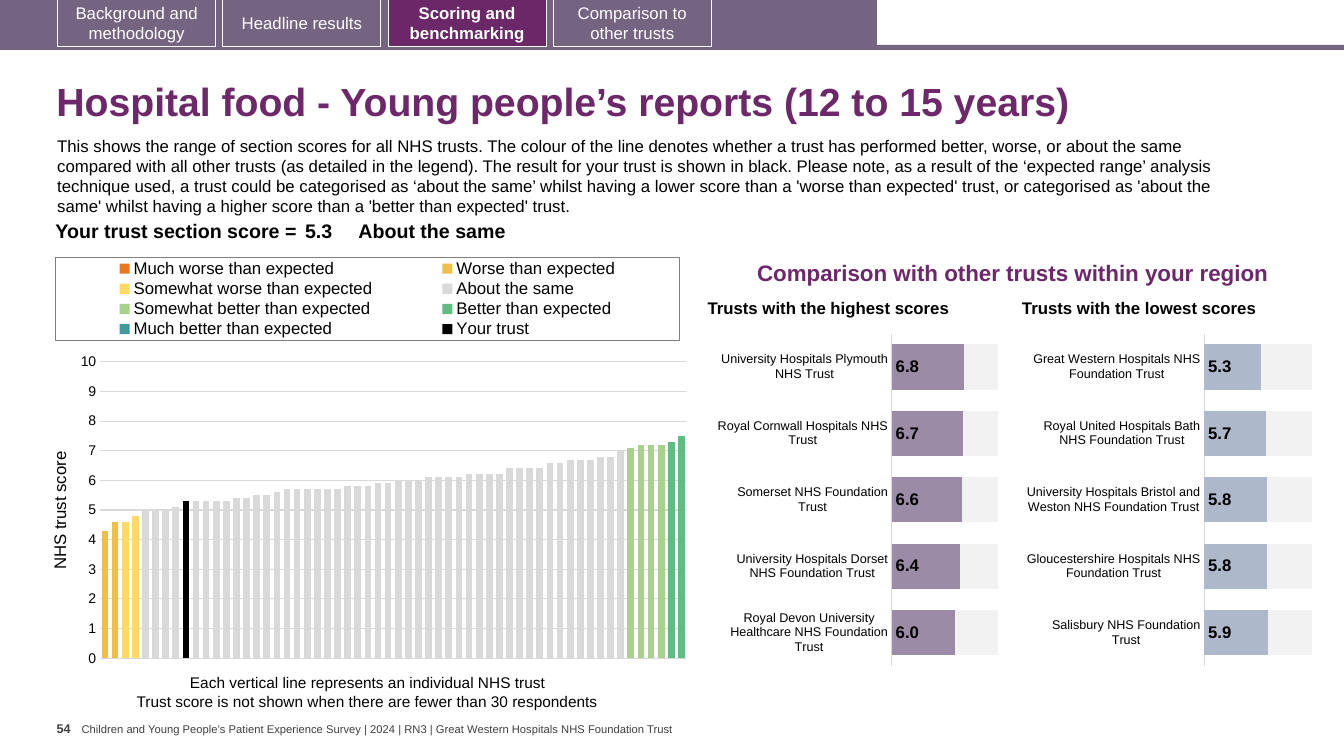
import copy
import pptx
import pptx.chart.data
import pptx.dml.color
import pptx.enum.chart
import pptx.enum.shapes
import pptx.enum.text
import pptx.oxml
import pptx.oxml.ns
import pptx.util
from dataclasses import dataclass

Pt = pptx.util.Pt
Anchor = pptx.enum.text.MSO_ANCHOR
Align = pptx.enum.text.PP_ALIGN
ChartType = pptx.enum.chart.XL_CHART_TYPE
qn = pptx.oxml.ns.qn
CHART_NS = pptx.oxml.ns.nsdecls("c", "a")


@dataclass(frozen=True)
class Theme:
    font: str = "Arial"
    band: str = "756382"
    active: str = "6B2768"
    heading: str = "6D276A"
    white: str = "FFFFFF"
    ink: str = "000000"
    footer: str = "404040"
    grid: str = "D9D9D9"
    frame: str = "7F7F7F"
    rest: str = "F2F2F2"
    highest: str = "9C8BA7"
    lowest: str = "ADB9CA"
    title_size: float = 28
    heading_size: float = 16
    score_size: float = 14
    body_size: float = 12
    caption_size: float = 11
    tick_size: float = 10
    small_size: float = 9
    footer_size: float = 8


THEME = Theme()

TITLE = "Hospital food - Young people’s reports (12 to 15 years)"
TABS = ["Background and methodology", "Headline results",
        "Scoring and benchmarking", "Comparison to other trusts"]
ACTIVE_TAB = 2
INTRO = (
    "This shows the range of section scores for all NHS trusts. The colour of the line denotes "
    "whether a trust has performed better, worse, or about the same compared with all other trusts "
    "(as detailed in the legend). The result for your trust is shown in black. Please note, as a "
    "result of the ‘expected range’ analysis technique used, a trust could be categorised as "
    "‘about the same’ whilst having a lower score than a 'worse than expected' trust, or "
    "categorised as 'about the same' whilst having a higher score than a 'better than expected' trust."
)
# text, column width, alignment, side margin
SCORE = [("Your trust section score =", 189.5, Align.RIGHT, 2.9),
         ("5.3", 41, Align.LEFT, 2.9), ("About the same", 611.5, Align.LEFT, 0)]

NO_MARGIN = (0, 0)
HEADING = dict(bold=True, margin=NO_MARGIN, anchor=Anchor.BOTTOM, spacing=0.9)
# text, (left, top, width, height), size, format
TEXTS = [
    (INTRO, (33.8, 93.2, 873.4, 65.5), THEME.body_size, {}),
    ("Each vertical line represents an individual NHS trust",
     (128.6, 477.4, 270, 20.9), THEME.caption_size, dict(wrap=False)),
    ("Trust score is not shown when there are fewer than 30 respondents",
     (90.5, 491, 346.3, 20.9), THEME.caption_size, dict(wrap=False)),
    ("Comparison with other trusts within your region",
     (540.8, 167.8, 393.8, 36.7), THEME.heading_size, dict(HEADING, color=THEME.heading)),
    ("Trusts with the highest scores", (505.4, 210.7, 206, 16.6), THEME.body_size, HEADING),
    ("Trusts with the lowest scores", (730, 210.7, 201, 16.6), THEME.body_size, HEADING),
    ("54", (40.5, 511.4, 18, 28.6), THEME.small_size,
     dict(bold=True, color=THEME.footer, margin=(0, 3.6), wrap=False)),
    ("Children and Young People’s Patient Experience Survey | 2024 | RN3 | "
     "Great Western Hospitals NHS Foundation Trust",
     (58.3, 515.8, 429, 9.4), THEME.footer_size,
     dict(color=THEME.footer, margin=NO_MARGIN, anchor=Anchor.MIDDLE, wrap=False)),
]

TRUST_COUNT = 58
# name, colour, index of first trust, scores
BANDS = [
    ("Much worse than expected", "E87722", 0, []),
    ("Worse than expected", "F1BE48", 0, [4.3, 4.6]),
    ("Somewhat worse than expected", "FFD966", 2, [4.6, 4.8]),
    ("About the same", "D9D9D9", 4, [
        5, 5, 5, 5.1, 5.3, 5.3, 5.3, 5.3, 5.3, 5.4, 5.4, 5.5, 5.5, 5.6, 5.7, 5.7,
        5.7, 5.7, 5.7, 5.7, 5.8, 5.8, 5.8, 5.9, 5.9, 6, 6, 6, 6.1, 6.1, 6.1, 6.1,
        6.2, 6.2, 6.2, 6.2, 6.4, 6.4, 6.4, 6.4, 6.6, 6.6, 6.7, 6.7, 6.7, 6.8, 6.8, 7]),
    ("Somewhat better than expected", "A9D18E", 52, [7.1, 7.2, 7.2, 7.2]),
    ("Better than expected", "5FBD83", 56, [7.3, 7.5]),
    ("Much better than expected", "419999", 0, []),
    ("Your trust", "000000", 8, [5.3]),
]
MAX_SCORE = 10
# frame, bar colour, trust scores
REGION = [
    ((733.5, 233.5, 208, 247), THEME.lowest, {
        "Great Western Hospitals NHS Foundation Trust": 5.3,
        "Royal United Hospitals Bath NHS Foundation Trust": 5.7,
        "University Hospitals Bristol and Weston NHS Foundation Trust": 5.8,
        "Gloucestershire Hospitals NHS Foundation Trust": 5.8,
        "Salisbury NHS Foundation Trust": 5.9}),
    ((511, 233.5, 206, 247), THEME.highest, {
        "University Hospitals Plymouth NHS Trust": 6.8,
        "Royal Cornwall Hospitals NHS Trust": 6.7,
        "Somerset NHS Foundation Trust": 6.6,
        "University Hospitals Dorset NHS Foundation Trust": 6.4,
        "Royal Devon University Healthcare NHS Foundation Trust": 6.0}),
]
# kind, own id, crossing id, hidden, side, crossing point
RIGHT_AXES = [("valAx", 9002, 9001, 0, "r", "max"), ("catAx", 9001, 9002, 1, "b", "autoZero")]


def rgb(value):
    return pptx.dml.color.RGBColor.from_string(value)


def points(frame):
    return [Pt(value) for value in frame]


def style_font(font, size, color=THEME.ink, bold=False):
    for name, value in dict(name=THEME.font, size=Pt(size), bold=bold).items():
        setattr(font, name, value)
    font.color.rgb = rgb(color)


def write(text_frame, text, size, color=THEME.ink, bold=False, align=Align.LEFT,
          anchor=Anchor.TOP, margin=(7.2, 3.6), spacing=None, wrap=True):
    side, edge = points(margin)
    values = dict(margin_left=side, margin_right=side, margin_top=edge, margin_bottom=edge,
                  vertical_anchor=anchor, word_wrap=wrap)
    for name, value in values.items():
        setattr(text_frame, name, value)
    para = text_frame.paragraphs[0]
    para.alignment, para.line_spacing = align, spacing
    span = para.add_run()
    span.text = text
    style_font(span.font, size, color, bold)


def add_rectangle(page, frame, fill, outline=None):
    box = page.shapes.add_shape(pptx.enum.shapes.MSO_SHAPE.RECTANGLE, *points(frame))
    box.shadow.inherit = False
    box.fill.solid()
    box.fill.fore_color.rgb = rgb(fill)
    if outline:
        box.line.color.rgb, box.line.width = rgb(outline), Pt(0.75)
    else:
        box.line.fill.background()
    return box


def add_navigation(page):
    add_rectangle(page, (0, 32, 960, 3.6), THEME.band)
    add_rectangle(page, (0, 0, 626.4, 33.8), THEME.band)
    for index, label in enumerate(TABS):
        active = index == ACTIVE_TAB
        tab = add_rectangle(page, (41.2 + 118 * index, -0.5, 113, 33.8),
                            THEME.active if active else THEME.band, THEME.white)
        write(tab.text_frame, label, THEME.body_size, THEME.white, active,
              Align.CENTER, Anchor.MIDDLE)


def add_score(page):
    total = sum(width for _, width, _, _ in SCORE)
    table = page.shapes.add_table(1, len(SCORE), *points((25.5, 154.8, total, 22))).table
    table.first_row = table.horz_banding = False
    for index, (text, width, align, side) in enumerate(SCORE):
        table.columns[index].width = Pt(width)
        cell = table.cell(0, index)
        cell.fill.background()
        write(cell.text_frame, text, THEME.score_size, bold=True, align=align)
        cell.margin_left = cell.margin_right = Pt(side)
        cell.margin_top = cell.margin_bottom = Pt(2.9)


def add_bars(page, kind, frame, names, series, gap):
    """Add a bar chart; series holds (name, colour, values)."""
    data = pptx.chart.data.CategoryChartData()
    data.categories = names
    for name, _, values in series:
        data.add_series(name, values)
    chart = page.shapes.add_chart(kind, *points(frame), data).chart
    chart.has_title = chart.has_legend = False
    style_font(chart.font, THEME.tick_size)
    plot = chart.plots[0]
    plot.gap_width, plot.overlap, plot.vary_by_categories = gap, 100, False
    for drawn, (_, color, _) in zip(plot.series, series):
        drawn.format.fill.solid()
        drawn.format.fill.fore_color.rgb = rgb(color)
    chart.value_axis.minimum_scale, chart.value_axis.maximum_scale = 0, MAX_SCORE
    return chart


def place(element, index, **edges):
    """Fix a chart part at fractions of the chart area."""
    for old in element.findall(qn("c:layout")):
        element.remove(old)
    modes = '<c:xMode val="edge"/><c:yMode val="edge"/>'
    target = '<c:layoutTarget val="inner"/>' if index == 0 else ""
    sizes = "".join(f'<c:{name} val="{value}"/>' for name, value in edges.items())
    element.insert(index, pptx.oxml.parse_xml(
        f'<c:layout {CHART_NS}><c:manualLayout>{target}{modes}{sizes}</c:manualLayout></c:layout>'))


def move_last_to_right_axis(chart):
    area = chart._chartSpace.chart.plotArea
    left = area.find(qn("c:barChart"))
    right = copy.deepcopy(left)
    left.remove(left.findall(qn("c:ser"))[-1])
    for series in right.findall(qn("c:ser"))[:-1]:
        right.remove(series)
    for axis_id, value in zip(right.findall(qn("c:axId")), (9001, 9002)):
        axis_id.set("val", str(value))
    left.addnext(right)
    last = area.find(qn("c:valAx"))
    for kind, own, crossing, hidden, side, crosses in RIGHT_AXES:
        limits = f'<c:max val="{MAX_SCORE}"/><c:min val="0"/>' if kind == "valAx" else ""
        axis = pptx.oxml.parse_xml(
            f'<c:{kind} {CHART_NS}><c:axId val="{own}"/><c:scaling><c:orientation val="minMax"/>'
            f'{limits}</c:scaling><c:delete val="{hidden}"/><c:axPos val="{side}"/>'
            '<c:majorTickMark val="out"/><c:minorTickMark val="none"/><c:tickLblPos val="none"/>'
            '<c:spPr><a:ln><a:noFill/></a:ln></c:spPr>'
            f'<c:crossAx val="{crossing}"/><c:crosses val="{crosses}"/></c:{kind}>')
        last.addnext(axis)
        last = axis


def add_trust_chart(page):
    series = [(name, color, [None] * start + scores + [None] * (TRUST_COUNT - start - len(scores)))
              for name, color, start, scores in BANDS]
    names = [str(number + 1) for number in range(TRUST_COUNT)]
    chart = add_bars(page, ChartType.COLUMN_CLUSTERED, (33.1, 177.8, 461.5, 303.1),
                     names, series, 50)
    chart.category_axis.visible = False
    axis = chart.value_axis
    axis.major_unit = 1
    axis.major_tick_mark = pptx.enum.chart.XL_TICK_MARK.NONE
    axis.format.line.fill.background()
    axis.major_gridlines.format.line.color.rgb = rgb(THEME.grid)
    axis.major_gridlines.format.line.width = Pt(0.75)
    style_font(axis.tick_labels.font, THEME.tick_size)
    title = axis.axis_title
    title.text_frame.text = "NHS trust score"
    style_font(title.text_frame.paragraphs[0].runs[0].font, THEME.body_size)
    place(title._element, 1, x=0, y=0.47)
    chart.has_legend = True
    legend = chart.legend
    legend.position = pptx.enum.chart.XL_LEGEND_POSITION.TOP
    legend.include_in_layout = False
    style_font(legend.font, THEME.body_size)
    place(legend._element, 1, x=0.014, y=0.02, w=0.966, h=0.196)
    legend._element.find(qn("c:txPr")).addprevious(pptx.oxml.parse_xml(
        f'<c:spPr {CHART_NS}><a:ln w="9525"><a:solidFill>'
        f'<a:srgbClr val="{THEME.frame}"/></a:solidFill></a:ln></c:spPr>'))
    move_last_to_right_axis(chart)
    place(chart._chartSpace.chart.plotArea, 0, x=0.083, y=0.266, w=0.908, h=0.699)


def add_region_chart(page, frame, color, scores):
    rest = [round(MAX_SCORE - score, 1) for score in scores.values()]
    series = [("Series 1", color, list(scores.values())), ("Series 2", THEME.rest, rest)]
    chart = add_bars(page, ChartType.BAR_STACKED, frame, list(scores), series, 47)
    chart.value_axis.visible = chart.value_axis.has_major_gridlines = False
    axis = chart.category_axis
    axis.reverse_order = True
    axis.major_tick_mark = pptx.enum.chart.XL_TICK_MARK.NONE
    axis.format.line.color.rgb, axis.format.line.width = rgb(THEME.grid), Pt(0.75)
    style_font(axis.tick_labels.font, THEME.small_size)
    labels = chart.plots[0].series[0].data_labels
    values = dict(show_value=True, number_format="0.0", number_format_is_linked=False,
                  position=pptx.enum.chart.XL_LABEL_POSITION.INSIDE_BASE)
    for name, value in values.items():
        setattr(labels, name, value)
    style_font(labels.font, THEME.body_size, bold=True)


def main():
    deck = pptx.Presentation()
    deck.slide_width, deck.slide_height = points((960, 540))
    page = deck.slides.add_slide(deck.slide_layouts[5])
    add_navigation(page)
    title = page.shapes.title
    title.left, title.top, title.width, title.height = points((33.1, 48.2, 899.3, 51.8))
    write(title.text_frame, TITLE, THEME.title_size, THEME.heading, True,
          anchor=Anchor.MIDDLE, spacing=0.9)
    for text, frame, size, values in TEXTS:
        write(page.shapes.add_textbox(*points(frame)).text_frame, text, size, **values)
    add_score(page)
    add_trust_chart(page)
    for frame, color, scores in REGION:
        add_region_chart(page, frame, color, scores)
    deck.save("out.pptx")


if __name__ == "__main__":
    main()
